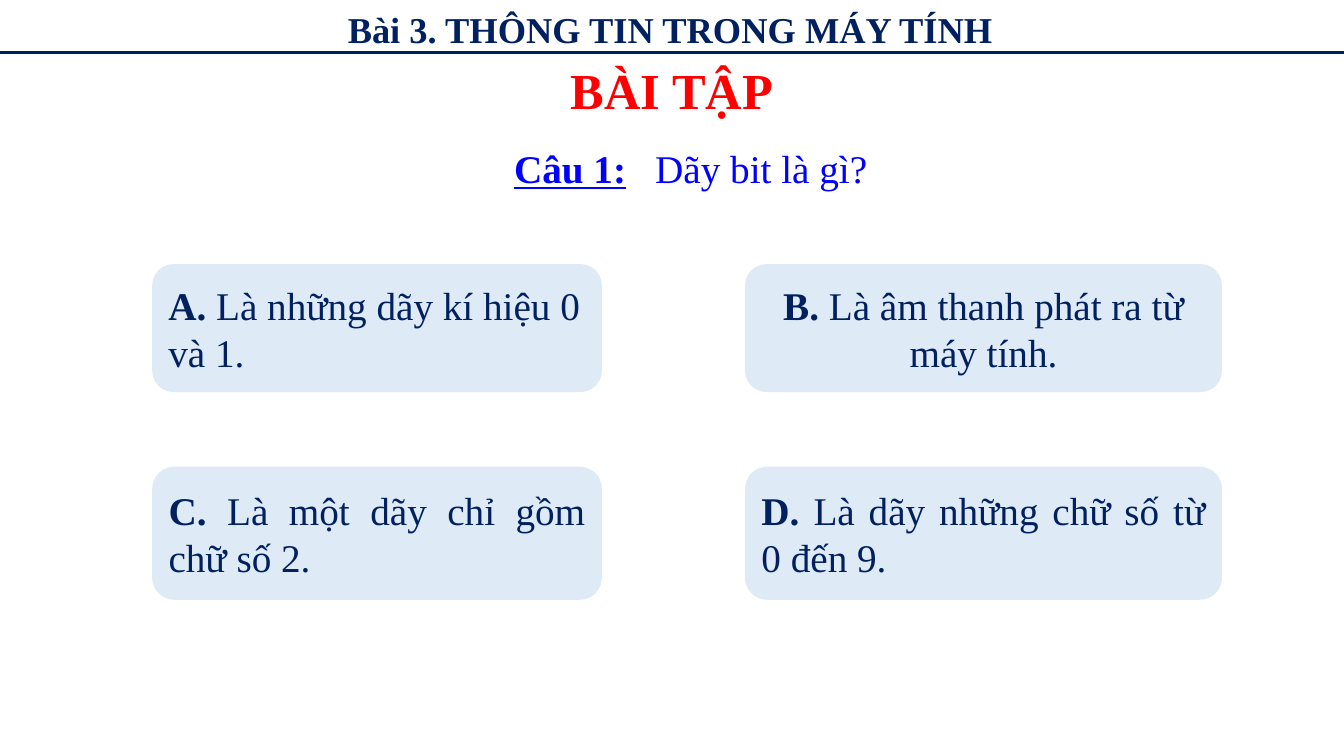
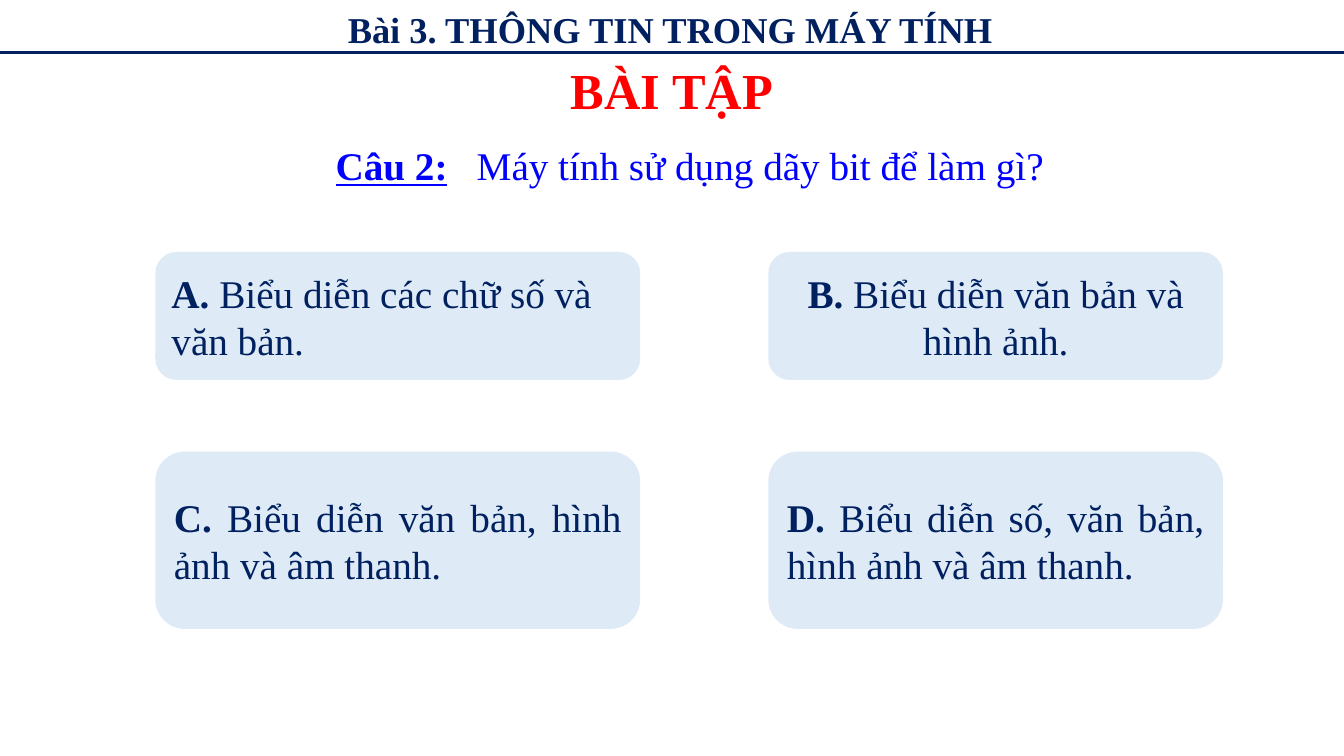
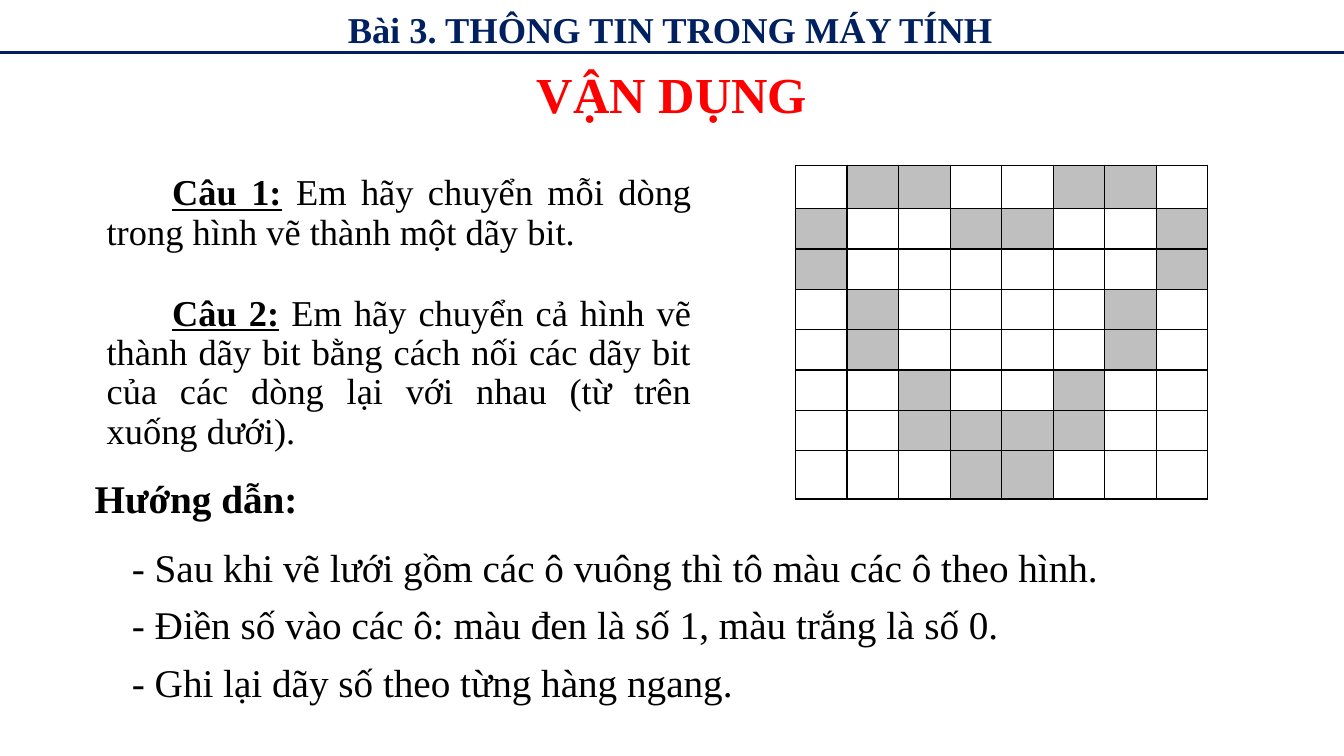
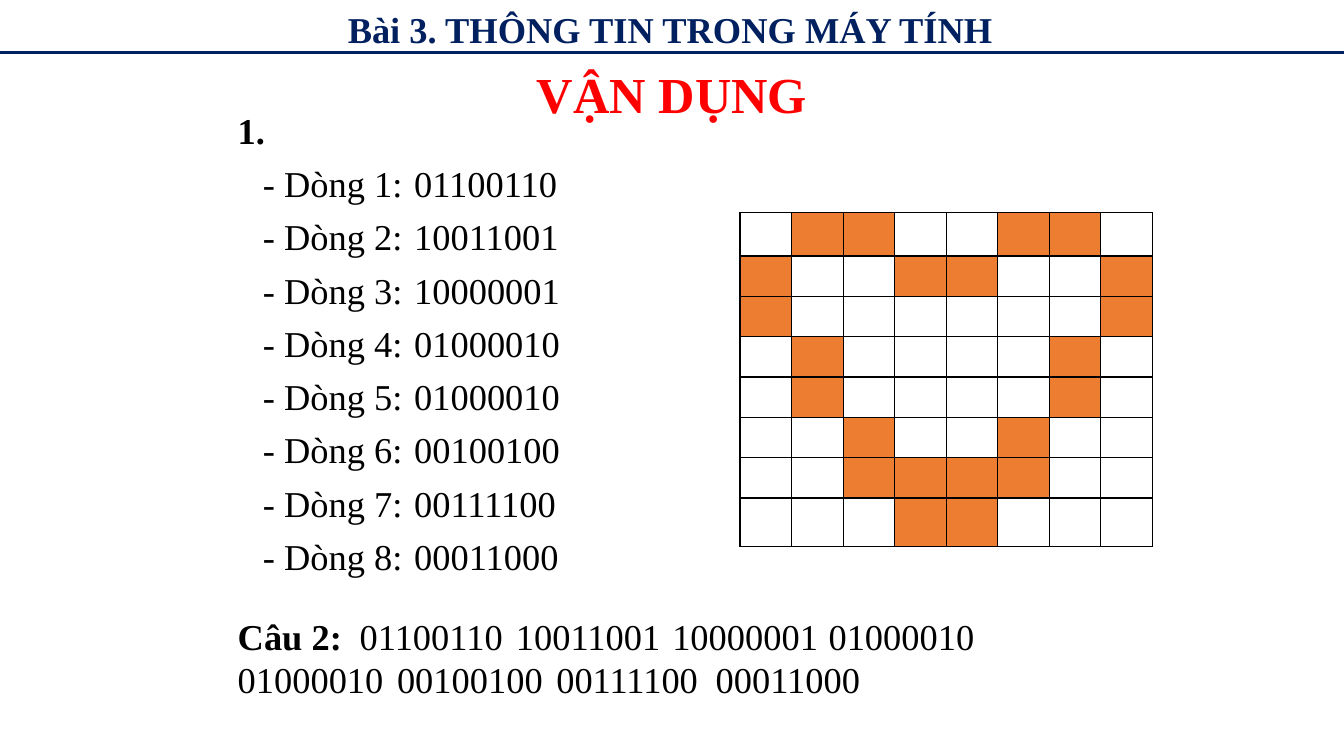
from dataclasses import dataclass
from itertools import product

from lxml.etree import SubElement
from pptx import Presentation
from pptx.dml.color import RGBColor
from pptx.enum.shapes import MSO_CONNECTOR, MSO_SHAPE
from pptx.enum.text import MSO_ANCHOR, MSO_AUTO_SIZE, PP_ALIGN
from pptx.oxml.ns import qn
from pptx.util import Inches, Pt


@dataclass(frozen=True)
class Theme:
    """Colours, font and type sizes shared by all slides."""
    font: str = "Times New Roman"
    navy: str = "002060"
    red: str = "FF0000"
    blue: str = "0000FF"
    black: str = "000000"
    white: str = "FFFFFF"
    pale_blue: str = "DEEBF7"
    grey: str = "BFBFBF"
    orange: str = "ED7D31"
    title_size: int = 36
    large_size: int = 28
    body_size: int = 26
    rule_width: float = 2.25
    grid_width: float = 1


@dataclass(frozen=True)
class Box:
    """A rectangle measured in inches."""
    left: float
    top: float
    width: float
    height: float

    def lengths(self):
        """Return the four sides as slide lengths."""
        return [Inches(side) for side in (self.left, self.top, self.width, self.height)]


THEME = Theme()
SLIDE_WIDTH, SLIDE_HEIGHT = 13.33, 7.5
LESSON = "Bài 3. THÔNG TIN TRONG MÁY TÍNH"
HEART_ROWS = [
    "01100110", "10011001", "10000001", "01000010",
    "01000010", "00100100", "00111100", "00011000",
]
HEART_HEIGHTS = [0.43] + [0.4] * 6 + [0.48]
GUIDE_LINES = [
    "- Sau khi vẽ lưới gồm các ô vuông thì tô màu các ô theo hình.",
    "- Điền số vào các ô: màu đen là số 1, màu trắng là số 0.",
    "- Ghi lại dãy số theo từng hàng ngang.",
]
TASKS = [
    ("Câu 1:", " Em hãy chuyển mỗi dòng trong hình vẽ thành một dãy bit."),
    ("Câu 2:", " Em hãy chuyển cả hình vẽ thành dãy bit bằng cách nối các dãy bit "
               "của các dòng lại với nhau (từ trên xuống dưới)."),
]
QUIZZES = [
    dict(
        label="Câu 1:", question="Dãy bit là gì?", question_box=Box(5, 1.35, 4.22, 0.64),
        columns=[(1.51, 4.46), (7.39, 4.73)], rows=[(2.62, 1.27), (4.63, 1.32)],
        answers=["Là những dãy kí hiệu 0 và 1.", "Là âm thanh phát ra từ máy tính.",
                 "Là một dãy chỉ gồm chữ số 2.", "Là dãy những chữ số từ 0 đến 9."],
    ),
    dict(
        label="Câu 2:", question="Máy tính sử dụng dãy bit để làm gì?",
        question_box=Box(3.23, 1.32, 8, 0.64),
        columns=[(1.54, 4.81), (7.62, 4.51)], rows=[(2.5, 1.27), (4.48, 1.76)],
        answers=["Biểu diễn các chữ số và văn bản.", "Biểu diễn văn bản và hình ảnh.",
                 "Biểu diễn văn bản, hình ảnh và âm thanh.",
                 "Biểu diễn số, văn bản, hình ảnh và âm thanh."],
    ),
]


def add_run(paragraph, text, size, color=THEME.black, bold=False, underline=False):
    """Append one formatted run."""
    run = paragraph.add_run()
    run.text = text
    font = run.font
    font.name, font.size = THEME.font, Pt(size)
    font.bold, font.underline = bold, underline
    font.color.rgb = RGBColor.from_string(color)


def add_tabs(paragraph, stops):
    """Give a paragraph left tab stops, in inches from the text edge."""
    tab_list = SubElement(paragraph._p.get_or_add_pPr(), qn("a:tabLst"))
    for stop in stops:
        SubElement(tab_list, qn("a:tab"), pos=str(Inches(stop)), algn="l")


def set_indent(paragraph, left=0, first=0):
    """Set the left margin and first-line indent in inches."""
    properties = paragraph._p.get_or_add_pPr()
    properties.set("marL", str(Inches(left)))
    properties.set("indent", str(Inches(first)))


def add_text_box(slide, box, anchor=MSO_ANCHOR.TOP, wrap=True):
    """Add an empty text box and return its text frame."""
    frame = slide.shapes.add_textbox(*box.lengths()).text_frame
    frame.word_wrap = wrap
    frame.vertical_anchor = anchor
    return frame


def next_paragraph(frame, index):
    """Return the first paragraph for index 0, otherwise a new one."""
    return frame.add_paragraph() if index else frame.paragraphs[0]


def add_header(slide, box):
    """Add the lesson name and the rule under it."""
    frame = add_text_box(slide, Box(box.left + 0.32, box.top + 0.02, box.width - 0.67, 0.54))
    paragraph = frame.paragraphs[0]
    paragraph.alignment = PP_ALIGN.CENTER
    add_run(paragraph, LESSON, THEME.body_size, THEME.navy, bold=True)
    bottom = Inches(box.top + box.height)
    rule = slide.shapes.add_connector(
        MSO_CONNECTOR.STRAIGHT, Inches(box.left), bottom, Inches(box.left + box.width), bottom)
    rule.line.color.rgb = RGBColor.from_string(THEME.navy)
    rule.line.width = Pt(THEME.rule_width)
    SubElement(rule._element.spPr, qn("a:effectLst"))


def add_titled_slide(presentation, title, top):
    """Add a slide with the shared header and a red title."""
    slide = presentation.slides.add_slide(presentation.slide_layouts[5])
    shape = slide.shapes.title
    shape.left, shape.top, shape.width, shape.height = Box(5.21, top, 2.91, 0.71).lengths()
    frame = shape.text_frame
    frame.word_wrap = False
    frame.auto_size = MSO_AUTO_SIZE.NONE
    frame.vertical_anchor = MSO_ANCHOR.TOP
    paragraph = frame.paragraphs[0]
    paragraph.alignment = PP_ALIGN.CENTER
    add_run(paragraph, title, THEME.title_size, THEME.red, bold=True)
    add_header(slide, Box(0, 0, SLIDE_WIDTH, 0.52))
    return slide


def add_answer(slide, box, letter, answer, alignment):
    """Add one rounded answer card."""
    card = slide.shapes.add_shape(MSO_SHAPE.ROUNDED_RECTANGLE, *box.lengths())
    card.shadow.inherit = False
    card.fill.solid()
    card.fill.fore_color.rgb = RGBColor.from_string(THEME.pale_blue)
    card.line.fill.background()
    frame = card.text_frame
    frame.word_wrap = True
    frame.vertical_anchor = MSO_ANCHOR.MIDDLE
    paragraph = frame.paragraphs[0]
    paragraph.alignment = alignment
    add_run(paragraph, f"{letter}. ", THEME.large_size, THEME.navy, bold=True)
    add_run(paragraph, answer, THEME.large_size, THEME.navy)


def add_quiz_slide(presentation, label, question, question_box, columns, rows, answers):
    """Add a question with a two-by-two grid of answers."""
    slide = add_titled_slide(presentation, "BÀI TẬP", 0.54)
    paragraph = add_text_box(slide, question_box, MSO_ANCHOR.MIDDLE).paragraphs[0]
    add_tabs(paragraph, [1.4])
    add_run(paragraph, label, THEME.large_size, THEME.blue, bold=True, underline=True)
    add_run(paragraph, "\t" + question, THEME.large_size, THEME.blue)
    alignments = [PP_ALIGN.LEFT, PP_ALIGN.CENTER, PP_ALIGN.JUSTIFY, PP_ALIGN.JUSTIFY]
    cells = product(rows, columns)
    for letter, answer, alignment, cell in zip("ABCD", answers, alignments, cells):
        (top, height), (left, width) = cell
        add_answer(slide, Box(left, top, width, height), letter, answer, alignment)


def format_cell(cell, color):
    """Fill a table cell and draw its four borders."""
    cell.margin_left = cell.margin_right = cell.margin_top = cell.margin_bottom = 0
    properties = cell._tc.get_or_add_tcPr()
    for side in ("lnL", "lnR", "lnT", "lnB"):
        line = SubElement(properties, qn(f"a:{side}"), w=str(Pt(THEME.grid_width)))
        SubElement(SubElement(line, qn("a:solidFill")), qn("a:srgbClr"), val=THEME.black)
    cell.fill.solid()
    cell.fill.fore_color.rgb = RGBColor.from_string(color)


def add_heart(slide, box, color):
    """Draw the bit rows as a grid, colouring each 1."""
    size = len(HEART_ROWS)
    table = slide.shapes.add_table(size, size, *box.lengths()).table
    table.first_row = table.horz_banding = False
    for column in table.columns:
        column.width = Inches(box.width / size)
    for row, height, bits in zip(table.rows, HEART_HEIGHTS, HEART_ROWS):
        row.height = Inches(height)
        for cell, bit in zip(row.cells, bits):
            format_cell(cell, color if bit == "1" else THEME.white)


def add_tasks(slide, box):
    """Add the two task paragraphs."""
    frame = add_text_box(slide, box)
    for index, (label, task) in enumerate(TASKS):
        paragraph = next_paragraph(frame, index)
        paragraph.alignment = PP_ALIGN.JUSTIFY
        paragraph.line_spacing = 0.9
        paragraph.space_before = Pt(30 * index)
        set_indent(paragraph, first=0.65)
        add_run(paragraph, label, THEME.body_size, bold=True, underline=True)
        add_run(paragraph, task, THEME.body_size)


def add_guide(slide, box):
    """Add the guide heading and its evenly spaced lines."""
    heading = add_text_box(slide, Box(box.left, box.top, 2.24, 0.57), wrap=False)
    add_run(heading.paragraphs[0], "Hướng dẫn:", THEME.large_size, bold=True)
    for index, line in enumerate(GUIDE_LINES):
        line_box = Box(box.left + 0.37, box.top + 0.68 + 0.57 * index, box.width - 0.37, 0.57)
        frame = add_text_box(slide, line_box, wrap=False)
        add_run(frame.paragraphs[0], line, THEME.large_size)


def add_row_answers(slide, box):
    """List the bits of each row of the heart."""
    frame = add_text_box(slide, box)
    heading = frame.paragraphs[0]
    heading.line_spacing = 0.9
    add_run(heading, "1.", THEME.body_size, bold=True)
    for number, bits in enumerate(HEART_ROWS, 1):
        paragraph = frame.add_paragraph()
        paragraph.line_spacing = 0.9
        paragraph.space_before = Pt(10)
        set_indent(paragraph, left=0.25)
        add_tabs(paragraph, [1.81])
        add_run(paragraph, f"- Dòng {number}:\t{bits}", THEME.body_size)


def add_joined_answer(slide, box):
    """Write all rows of bits one after another on two lines."""
    frame = add_text_box(slide, box)
    first, second = frame.paragraphs[0], frame.add_paragraph()
    add_tabs(first, [1.21 + 1.55 * index for index in range(4)])
    add_run(first, "Câu 2:", THEME.body_size, bold=True)
    add_run(first, "\t" + "\t".join(HEART_ROWS[:4]), THEME.body_size)
    add_tabs(second, [1.58 * index for index in range(1, 4)])
    add_run(second, "\t".join(HEART_ROWS[4:]), THEME.body_size)


def add_task_slide(presentation):
    """Add the slide that sets the tasks."""
    slide = add_titled_slide(presentation, "VẬN DỤNG", 0.58)
    add_tasks(slide, Box(0.96, 1.68, 6, 2.81))
    add_heart(slide, Box(7.89, 1.64, 4.09, 3.31), THEME.grey)
    add_guide(slide, Box(0.84, 4.66, 10.25, 2.39))


def add_solution_slide(presentation):
    """Add the slide that gives the solutions."""
    slide = add_titled_slide(presentation, "VẬN DỤNG", 0.58)
    add_row_answers(slide, Box(2.26, 1.07, 3.7, 4.96))
    add_joined_answer(slide, Box(2.26, 6.04, 9.07, 1.02))
    add_heart(slide, Box(7.34, 2.11, 4.09, 3.31), THEME.orange)


def main():
    """Build and save the presentation."""
    presentation = Presentation()
    presentation.slide_width = Inches(SLIDE_WIDTH)
    presentation.slide_height = Inches(SLIDE_HEIGHT)
    for quiz in QUIZZES:
        add_quiz_slide(presentation, **quiz)
    add_task_slide(presentation)
    add_solution_slide(presentation)
    presentation.save("out.pptx")


if __name__ == "__main__":
    main()
